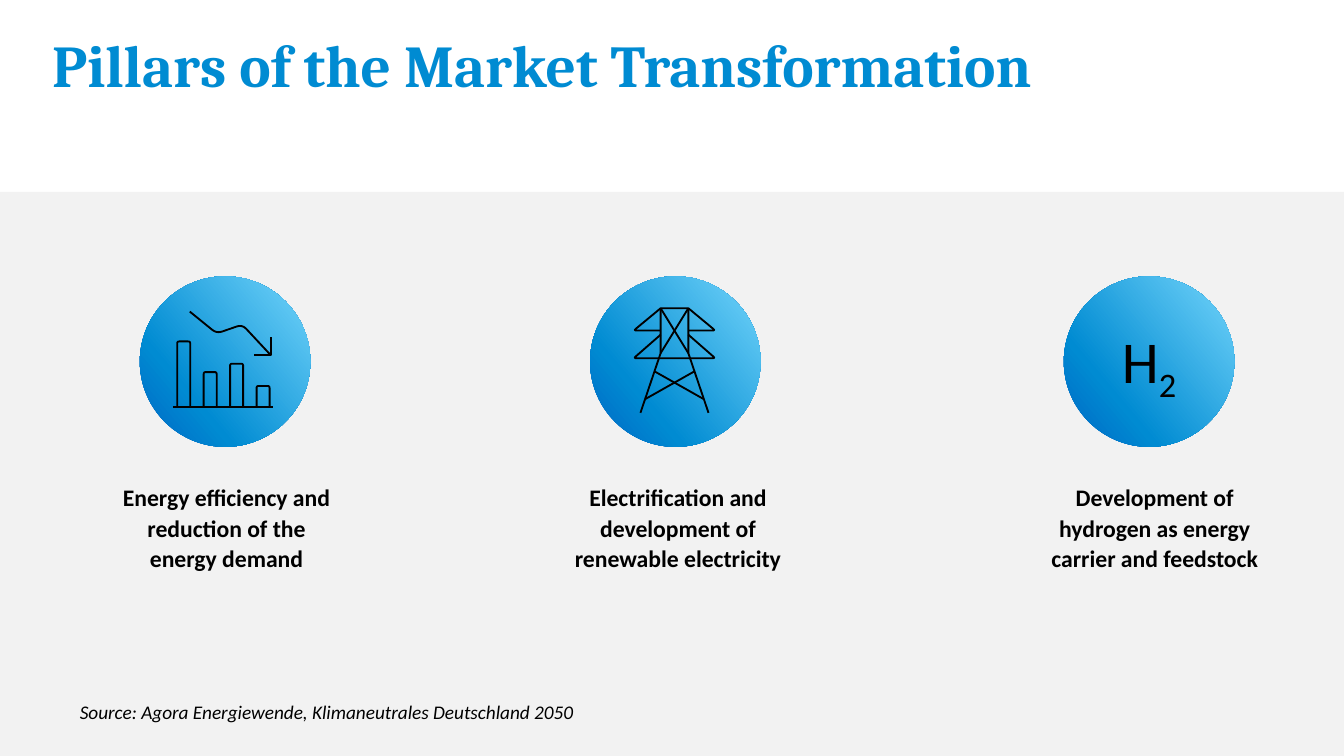
import copy

import pptx
import pptx.dml.color
import pptx.enum.shapes
import pptx.enum.text
import pptx.oxml.ns
import pptx.util

Cm = pptx.util.Cm
Pt = pptx.util.Pt
ALIGN = pptx.enum.text.PP_ALIGN
ANCHOR = pptx.enum.text.MSO_ANCHOR
SHAPE = pptx.enum.shapes.MSO_SHAPE

COLORS = {"title": "008BD2", "text": "000000", "panel": "F2F2F2"}
GRADIENT = [(0.05, "006CC6"), (0.3, "008BD2"), (0.85, "5BC5F2")]

TITLE = "Pillars of the Market Transformation"
SOURCE = "Source: Agora Energiewende, Klimaneutrales Deutschland 2050"

# Lengths are in centimetres; icon points are offsets from the circle centre.
CIRCLE_SIZE, CIRCLE_Y = 4.06, 8.61
LABEL_TOP, LABEL_WIDTH, LABEL_HEIGHT = 11.33, 5.51, 2.46

BASELINE, BAR_LEFT, BAR_WIDTH, BAR_PITCH = 1.09, -1.14, 0.31, 0.63
BAR_TOPS = [-0.48, 0.25, 0.05, 0.58]
# Each stroke is (corner radius, points).
CHART_ICON = [
    (0, [(-1.24, BASELINE), (1.14, BASELINE)]),
    (0.14, [(1.09, -0.15), (0.41, -0.88), (-0.2, -0.67), (-0.84, -1.19)]),
    (0, [(0.69, -0.15), (1.09, -0.15), (1.09, -0.58)]),
]
for index, top in enumerate(BAR_TOPS):
    left = BAR_LEFT + index * BAR_PITCH
    right = left + BAR_WIDTH
    CHART_ICON.append(
        (0.05, [(left, BASELINE), (left, top), (right, top), (right, BASELINE)]))

TOWER_ICON = [
    (0, [(-0.83, 1.22), (-0.35, -0.2), (-0.35, -1.27),
         (0.31, -1.27), (0.31, -0.2), (0.79, 1.22)]),
    (0.06, [(-0.35, -0.64), (-0.99, -0.08), (0.95, -0.08), (0.31, -0.64)]),
]
for side in (-1, 1):
    strokes = [
        (0.06, [(0.33, -1.27), (0.97, -0.74), (0.33, -0.74)]),
        (0, [(-0.48, 0.23), (0.69, 0.89)]),
        (0, [(-0.33, -1.27), (0.33, -0.2)]),
    ]
    TOWER_ICON += [(radius, [(side * x - 0.02, y) for x, y in points])
                   for radius, points in strokes]

# Circle centre, label left, label, icon strokes, formula as (text, is subscript)
PILLARS = [
    (5.36, 2.64, "Energy efficiency and reduction of the energy demand", CHART_ICON, []),
    (16.08, 13.39, "Electrification and development of renewable electricity", TOWER_ICON, []),
    (27.36, 24.74, "Development of hydrogen as energy carrier and feedstock", [],
     [("H", False), ("2", True)]),
]


def rgb(value):
    return pptx.dml.color.RGBColor.from_string(value)


def write_text(shape, spans, size, font="Calibri", color="text", bold=False, italic=False,
               align=ALIGN.LEFT, anchor=ANCHOR.TOP, spacing=1.07, inset=None):
    """Fill a shape with one paragraph of (text, is subscript) spans."""
    frame = shape.text_frame
    frame.word_wrap = True
    frame.vertical_anchor = anchor
    if inset is not None:
        frame.margin_left = frame.margin_right = Cm(inset)
        frame.margin_top = frame.margin_bottom = Cm(inset)
    para = frame.paragraphs[0]
    para.alignment = align
    para.line_spacing = spacing
    for text, subscript in spans:
        span = para.add_run()
        span.text = text
        span.font.name = font
        span.font.size = Pt(size)
        span.font.bold = bold
        span.font.italic = italic
        span.font.color.rgb = rgb(COLORS[color])
        if subscript:
            span.font._element.set("baseline", "-25000")


def add_text(page, text, left, top, width, height, **style):
    box = page.shapes.add_textbox(Cm(left), Cm(top), Cm(width), Cm(height))
    write_text(box, [(text, False)], **style)


def add_shape(page, kind, left, top, width, height):
    shape = page.shapes.add_shape(kind, Cm(left), Cm(top), Cm(width), Cm(height))
    shape.shadow.inherit = False
    shape.line.fill.background()
    return shape


def fill_gradient(shape):
    shape.fill.gradient()
    shape.fill.gradient_angle = 40
    stop_list = shape._element.spPr.find(".//" + pptx.oxml.ns.qn("a:gsLst"))
    stop_list.append(copy.deepcopy(stop_list[-1]))
    for stop, (position, color) in zip(shape.fill.gradient_stops, GRADIENT):
        stop.position = position
        stop.color.rgb = rgb(color)


def toward(start, end, distance):
    dx, dy = end[0] - start[0], end[1] - start[1]
    share = distance / (dx * dx + dy * dy) ** 0.5
    return start[0] + dx * share, start[1] + dy * share


def round_corners(points, radius, steps=6):
    """Replace each inner point by a short quadratic curve."""
    if not radius:
        return points
    rounded = [points[0]]
    for before, corner, after in zip(points, points[1:], points[2:]):
        first, last = toward(corner, before, radius), toward(corner, after, radius)
        for step in range(steps + 1):
            t = step / steps
            rounded.append(tuple((1 - t) ** 2 * a + 2 * t * (1 - t) * b + t * t * c
                                 for a, b, c in zip(first, corner, last)))
    return rounded + [points[-1]]


def draw_icon(page, strokes, center_x, center_y):
    group = page.shapes.add_group_shape()
    for radius, points in strokes:
        path = [(Cm(center_x + x), Cm(center_y + y)) for x, y in round_corners(points, radius)]
        builder = group.shapes.build_freeform(*path[0])
        builder.add_line_segments(path[1:], close=False)
        stroke = builder.convert_to_shape()
        stroke.shadow.inherit = False
        stroke.fill.background()
        stroke.line.color.rgb = rgb(COLORS["text"])
        stroke.line.width = Pt(1.25)


def main():
    deck = pptx.Presentation()
    deck.slide_width, deck.slide_height = Cm(32), Cm(18)
    page = deck.slides.add_slide(deck.slide_layouts[6])

    add_text(page, TITLE, 0.99, -0.51, 29, 3, size=40, font="Cambria", color="title",
             bold=True, anchor=ANCHOR.BOTTOM, spacing=Pt(40))
    panel = add_shape(page, SHAPE.RECTANGLE, 0, 4.57, 32, 13.5)
    panel.fill.solid()
    panel.fill.fore_color.rgb = rgb(COLORS["panel"])

    for center, label_left, label, strokes, formula in PILLARS:
        circle = add_shape(page, SHAPE.OVAL, center - CIRCLE_SIZE / 2,
                           CIRCLE_Y - CIRCLE_SIZE / 2, CIRCLE_SIZE, CIRCLE_SIZE)
        fill_gradient(circle)
        if formula:
            write_text(circle, formula, size=40, align=ALIGN.CENTER,
                       anchor=ANCHOR.MIDDLE, inset=0)
        if strokes:
            draw_icon(page, strokes, center, CIRCLE_Y)
        add_text(page, label, label_left, LABEL_TOP, LABEL_WIDTH, LABEL_HEIGHT,
                 size=16, bold=True, align=ALIGN.CENTER)

    add_text(page, SOURCE, 1.9, 16.43, 29, 1, size=13, italic=True,
             anchor=ANCHOR.MIDDLE, inset=0)
    deck.save("out.pptx")


if __name__ == "__main__":
    main()
